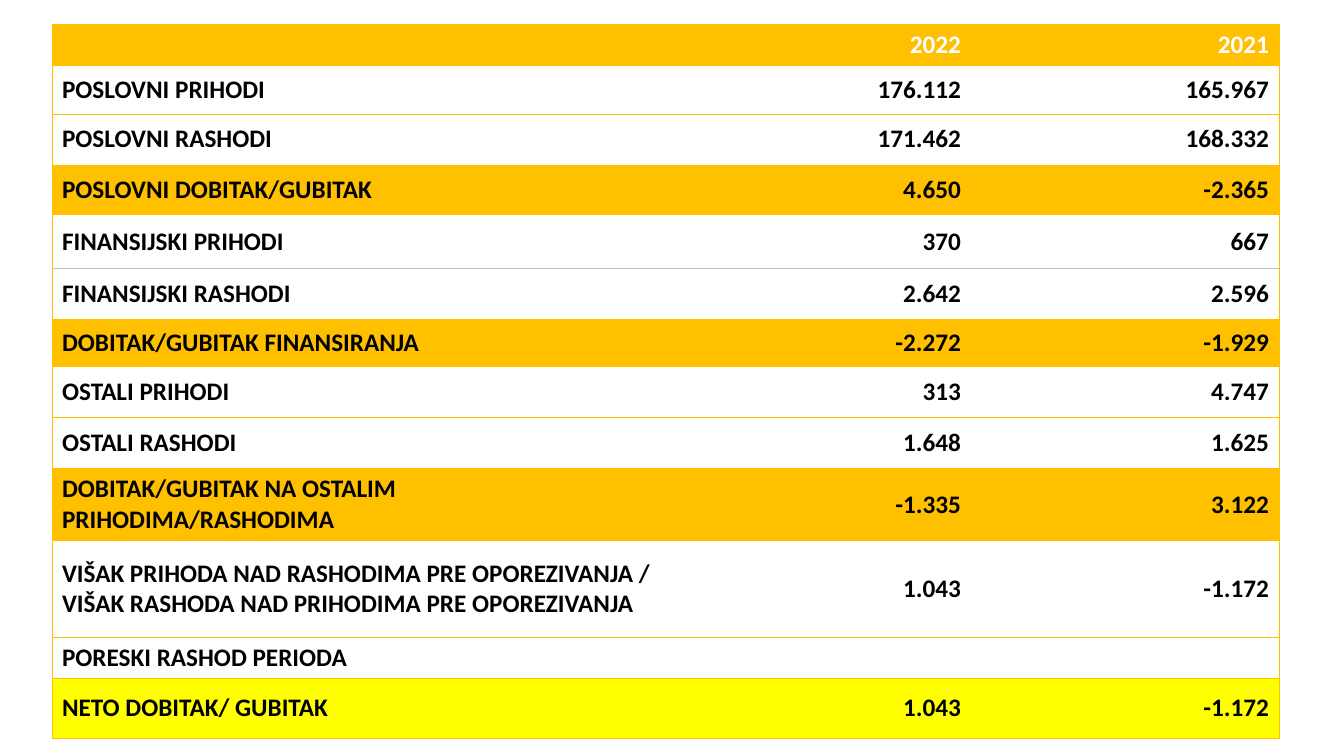
from lxml import etree
from pptx import Presentation
from pptx.dml.color import RGBColor
from pptx.enum.text import MSO_ANCHOR, PP_ALIGN
from pptx.oxml.ns import qn
from pptx.util import Pt

MIDDLE = MSO_ANCHOR.MIDDLE
LEFT, RIGHT = PP_ALIGN.LEFT, PP_ALIGN.RIGHT

GOLD, YELLOW, GREY = "FFC000", "FFFF00", "BFBFBF"
WHITE, BLACK = "FFFFFF", "000000"
COLS = [621, 298, 308]

# height, fill, label, 2022, 2021
ROWS = [
    (39, GOLD, "", "2022", "2021"),
    (49, WHITE, "POSLOVNI PRIHODI", "176.112", "165.967"),
    (51, WHITE, "POSLOVNI RASHODI", "171.462", "168.332"),
    (50, GOLD, "POSLOVNI DOBITAK/GUBITAK", "4.650", "-2.365"),
    (54, WHITE, "FINANSIJSKI PRIHODI", "370", "667"),
    (51, WHITE, "FINANSIJSKI RASHODI", "2.642", "2.596"),
    (47, GOLD, "DOBITAK/GUBITAK FINANSIRANJA", "-2.272", "-1.929"),
    (51, WHITE, "OSTALI PRIHODI", "313", "4.747"),
    (51, WHITE, "OSTALI RASHODI", "1.648", "1.625"),
    (69, GOLD, "DOBITAK/GUBITAK NA OSTALIM PRIHODIMA/RASHODIMA",
     "-1.335", "3.122"),
    (97, WHITE, "VIŠAK PRIHODA NAD RASHODIMA PRE OPOREZIVANJA / "
     "VIŠAK RASHODA NAD PRIHODIMA PRE OPOREZIVANJA", "1.043", "-1.172"),
    (39, WHITE, "PORESKI RASHOD PERIODA", "", ""),
    (60, YELLOW, "NETO DOBITAK/ GUBITAK", "1.043", "-1.172"),
]
GREY_TOP = 5  # row whose upper rule is grey


def px(n):
    return round(n * 914400 / 100.8)


def color(code):
    return RGBColor.from_string(code)


def add_edge(cell, side, code):
    """Draw one cell border, or hide it when code is None."""
    props = cell._tc.get_or_add_tcPr()
    line = etree.SubElement(props, qn("a:ln" + side), w=str(Pt(0.5)))
    if code is None:
        etree.SubElement(line, qn("a:noFill"))
    else:
        fill = etree.SubElement(line, qn("a:solidFill"))
        etree.SubElement(fill, qn("a:srgbClr"), val=code)


def set_cell(cell, text, fill, ink, align, edges):
    for side, code in edges.items():
        add_edge(cell, side, code)
    cell.fill.solid()
    cell.fill.fore_color.rgb = color(fill)
    cell.vertical_anchor = MIDDLE
    if not text:
        return
    cell.text_frame.text = text
    para = cell.text_frame.paragraphs[0]
    para.alignment = align
    font = para.runs[0].font
    font.name, font.size, font.bold = "Calibri", Pt(18), True
    font.color.rgb = color(ink)


def add_table(slide, left, top):
    height = sum(row[0] for row in ROWS)
    frame = slide.shapes.add_table(len(ROWS), len(COLS), px(left), px(top),
                                   px(sum(COLS)), px(height))
    table = frame.table
    table.horz_banding = False
    for col, width in zip(table.columns, COLS):
        col.width = px(width)
    for r, (height, fill, *texts) in enumerate(ROWS):
        table.rows[r].height = px(height)
        for c, text in enumerate(texts):
            edges = {
                "L": GOLD if c == 0 else None,
                "R": GOLD if c == len(COLS) - 1 else None,
                "T": GREY if r == GREY_TOP else GOLD,
                "B": GREY if r + 1 == GREY_TOP else GOLD,
            }
            set_cell(table.cell(r, c), text, fill, BLACK if r else WHITE,
                     RIGHT if c else LEFT, edges)


def main():
    deck = Presentation()
    deck.slide_width, deck.slide_height = px(1344), px(756)
    slide = deck.slides.add_slide(deck.slide_layouts[6])
    add_table(slide, 52, 24)
    deck.save("out.pptx")


if __name__ == "__main__":
    main()
